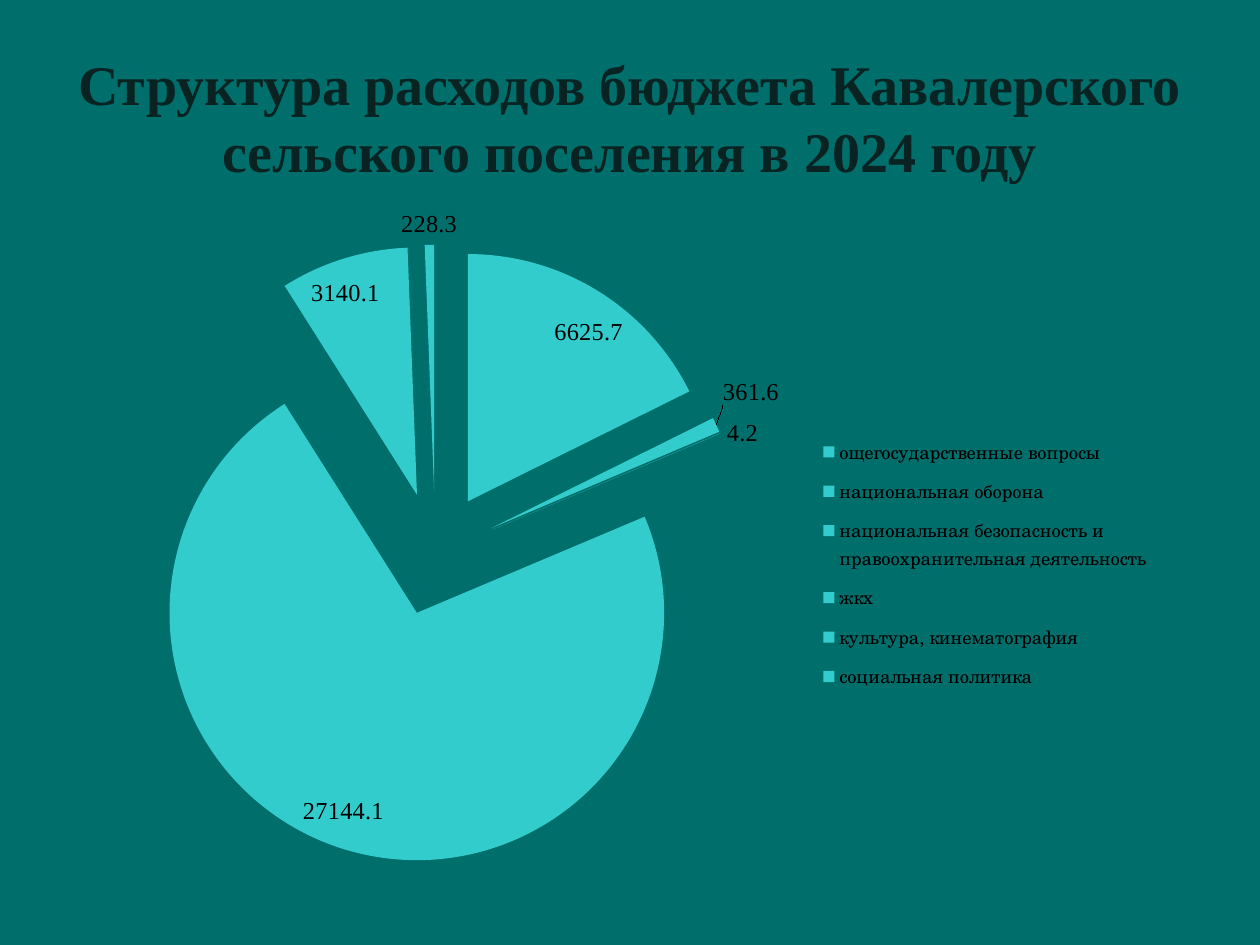
from lxml.etree import SubElement
from pptx import Presentation
from pptx.chart.data import CategoryChartData
from pptx.dml.color import RGBColor
from pptx.enum.chart import XL_CHART_TYPE, XL_LABEL_POSITION, XL_LEGEND_POSITION
from pptx.enum.text import MSO_ANCHOR, PP_ALIGN
from pptx.oxml.ns import qn
from pptx.util import Cm, Pt

BACKGROUND = RGBColor(0x00, 0x6E, 0x6B)
TITLE_COLOR = RGBColor(0x08, 0x23, 0x22)
SLICE_COLOR = RGBColor(0x33, 0xCC, 0xCC)
BLACK = RGBColor(0x00, 0x00, 0x00)
TEXT_FONT = "Times New Roman"
LEGEND_FONT = "TeX Gyre Schola"
EXPLOSION_PERCENT = 25
EXPENSES = {
    "ощегосударственные вопросы": 6625.7,
    "национальная оборона": 361.6,
    "национальная безопасность и правоохранительная деятельность": 4.2,
    "жкх": 27144.1,
    "культура, кинематография": 3140.1,
    "социальная политика": 228.3,
}


def format_font(font, name, size, color, bold=False):
    """Apply typeface, size, colour and weight to a font."""
    font.name = name
    font.size = Pt(size)
    font.bold = bold
    font.color.rgb = color


def set_layout(element, left, top, width, height, inner=False):
    """Place a chart part by fractions of the chart area."""
    layout = element.get_or_add_layout() if hasattr(element, "get_or_add_layout") else element.find(qn("c:layout"))
    if layout is None:
        layout = SubElement(element, qn("c:layout"))
        element.insert(0, layout)
    for child in list(layout):
        layout.remove(child)
    manual = SubElement(layout, qn("c:manualLayout"))
    settings = [("layoutTarget", "inner")] if inner else []
    settings += [("xMode", "edge"), ("yMode", "edge")]
    settings += [("x", left), ("y", top), ("w", width), ("h", height)]
    for tag, value in settings:
        SubElement(manual, qn(f"c:{tag}")).set("val", str(value))


def add_title(slide, left, top, width, height):
    """Fill and format the title placeholder in the given box."""
    title = slide.shapes.title
    title.left, title.top, title.width, title.height = left, top, width, height
    text_frame = title.text_frame
    text_frame.text = "Структура расходов бюджета Кавалерского сельского поселения в 2024 году"
    text_frame.word_wrap = True
    text_frame.vertical_anchor = MSO_ANCHOR.MIDDLE
    paragraph = text_frame.paragraphs[0]
    paragraph.alignment = PP_ALIGN.CENTER
    format_font(paragraph.runs[0].font, TEXT_FONT, 32, TITLE_COLOR, bold=True)


def add_expense_chart(slide, left, top, width, height):
    """Draw the exploded pie of expenses with its legend in the given box."""
    data = CategoryChartData(number_format="General")
    data.categories = list(EXPENSES)
    data.add_series("Series 1", list(EXPENSES.values()))
    chart = slide.shapes.add_chart(XL_CHART_TYPE.PIE_EXPLODED, left, top, width, height, data).chart
    chart.has_title = False
    format_font(chart.font, TEXT_FONT, 13.9, BLACK)

    plot = chart.plots[0]
    plot.vary_by_categories = True
    series = plot.series[0]
    for explosion in series._element.findall(qn("c:explosion")):
        explosion.set("val", str(EXPLOSION_PERCENT))
    for index in range(len(EXPENSES)):
        point_format = series.points[index].format
        point_format.fill.solid()
        point_format.fill.fore_color.rgb = SLICE_COLOR
        point_format.line.fill.background()
    for point in series._element.findall(qn("c:dPt")):
        explosion = point.find(qn("c:explosion"))
        if explosion is None:
            explosion = SubElement(point, qn("c:explosion"))
            point.find(qn("c:spPr")).addprevious(explosion)
        explosion.set("val", str(EXPLOSION_PERCENT))

    plot.has_data_labels = True
    labels = plot.data_labels
    labels.show_value = True
    labels.show_percentage = False
    labels.number_format = "General"
    labels.number_format_is_linked = False
    labels.position = XL_LABEL_POSITION.BEST_FIT
    format_font(labels.font, TEXT_FONT, 13.9, BLACK)

    chart.has_legend = True
    legend = chart.legend
    legend.position = XL_LEGEND_POSITION.RIGHT
    legend.include_in_layout = False
    format_font(legend.font, LEGEND_FONT, 10.6, BLACK)
    legend_element = legend._element
    if legend_element.find(qn("c:layout")) is None:
        legend_element.find(qn("c:legendPos")).addnext(SubElement(legend_element, qn("c:layout")))
    set_layout(legend_element, 0.65, 0.34, 0.3, 0.4)
    set_layout(chart._chartSpace.chart.plotArea, 0.064, 0.075, 0.53, 0.9, inner=True)


def main():
    """Build and save the presentation."""
    presentation = Presentation()
    presentation.slide_width = Cm(25.4)
    presentation.slide_height = Cm(19.05)
    slide = presentation.slides.add_slide(presentation.slide_layouts[5])
    slide.background.fill.solid()
    slide.background.fill.fore_color.rgb = BACKGROUND
    add_title(slide, Cm(1.27), Cm(0.76), Cm(22.86), Cm(3.18))
    add_expense_chart(slide, Cm(1.04), Cm(3.86), Cm(23.52), Cm(13.92))
    presentation.save("out.pptx")


if __name__ == "__main__":
    main()
